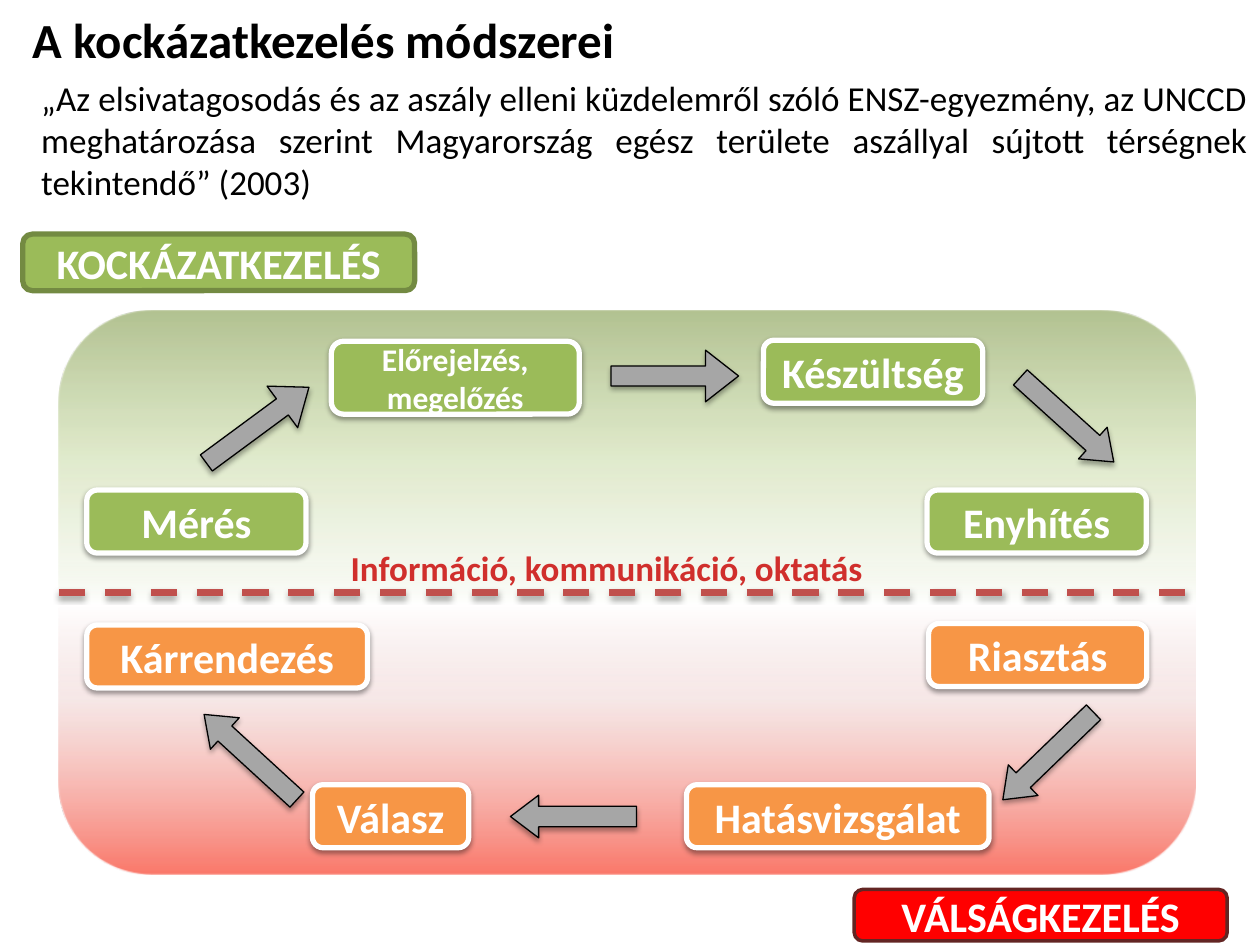
from lxml.etree import SubElement
from pptx import Presentation
from pptx.dml.color import RGBColor
from pptx.enum.dml import MSO_LINE
from pptx.enum.shapes import MSO_CONNECTOR, MSO_SHAPE
from pptx.enum.text import MSO_ANCHOR, MSO_AUTO_SIZE, PP_ALIGN
from pptx.oxml.ns import qn
from pptx.util import Cm, Pt

GREEN, ORANGE, RED = "9BBB59", "F79646", "FF0000"
WHITE, BLACK, GREY = "FFFFFF", "000000", "A6A6A6"

# Gradient stops: position %, colour, opacity %
PANEL_STOPS = [(0, "77933C", 56), (26, "C3D69B", 50), (44, "EBF1DE", 54),
               (52, WHITE, 100), (69, "F2DCDB", 66), (100, "FA786A", 100)]
INFO_STOPS = [(0, "FC7C7A", 100), (75, "D02F2C", 100), (100, "C70500", 100)]

BOX_HEIGHT = 1.27
# Steps of the cycle: text, left, top, width, height, fill, text size
STEPS = [
    ("Enyhítés", 18.69, 9.88, 4.42, BOX_HEIGHT, GREEN, 24),
    ("Mérés", 1.75, 9.88, 4.42, BOX_HEIGHT, GREEN, 24),
    ("Készültség", 15.39, 6.86, 4.42, BOX_HEIGHT, GREEN, 24),
    ("Előrejelzés, megelőzés", 6.68, 6.88, 5, 1.47, GREEN, 18),
    ("Hatásvizsgálat", 13.84, 15.82, 6.1, BOX_HEIGHT, ORANGE, 24),
    ("Riasztás", 18.72, 12.57, 4.4, BOX_HEIGHT, ORANGE, 24),
    ("Válasz", 6.3, 15.82, 3.15, BOX_HEIGHT, ORANGE, 24),
    ("Kárrendezés", 1.75, 12.6, 5.66, BOX_HEIGHT, ORANGE, 24),
]
WIDE = (2.57, 1.04, 0.39, 0.64)
SLIM = (2.54, 0.86, 0.48, 0.66)
# Arrows of the cycle: left, top, rotation, (width, height, adjustments)
ARROWS = [
    (3.91, 8.05, 323.6, WIDE),
    (12.32, 7.06, 0, WIDE),
    (20.24, 8.03, 42.1, SLIM),
    (19.86, 14.81, 136, SLIM),
    (10.29, 16.03, 180, SLIM),
    (3.78, 14.83, 222.5, SLIM),
]


def rgb(value):
    return RGBColor.from_string(value)


def set_format(target, values):
    for name, value in values.items():
        setattr(target, name, value)


def set_fill(fill, color):
    fill.solid()
    fill.fore_color.rgb = rgb(color)


def add_color(parent, color, opacity):
    node = SubElement(parent, qn("a:srgbClr"), val=color)
    if opacity < 100:
        SubElement(node, qn("a:alpha"), val=str(opacity * 1000))


def set_gradient(fill, owner, stops):
    """Fill from top to bottom; owner is the XML element holding the fill."""
    fill.gradient()
    fill.gradient_angle = 270
    stop_list = owner.find(qn("a:gradFill")).find(qn("a:gsLst"))
    for old in list(stop_list):
        stop_list.remove(old)
    for position, color, opacity in stops:
        stop = SubElement(stop_list, qn("a:gs"), pos=str(position * 1000))
        add_color(stop, color, opacity)


def add_shadow(properties, opacity, distance):
    """Cast a soft shadow downwards from the owner of the spPr element."""
    effects = properties.find(qn("a:effectLst"))
    if effects is None:
        effects = SubElement(properties, qn("a:effectLst"))
    shadow = SubElement(effects, qn("a:outerShdw"), blurRad=str(Pt(3.1)),
                        dist=str(Pt(distance)), dir="5400000", rotWithShape="0")
    add_color(shadow, BLACK, opacity)


def write(frame, text, size, color=BLACK, bold=True, align=PP_ALIGN.CENTER):
    paragraph = frame.paragraphs[0]
    paragraph.alignment = align
    run = paragraph.add_run()
    run.text = text
    set_format(run.font, {"name": "Calibri", "size": Pt(size), "bold": bold})
    run.font.color.rgb = rgb(color)
    return run


def add_filled(slide, kind, place, color, line=None, line_width=0):
    shape = slide.shapes.add_shape(kind, *map(Cm, place))
    shape.shadow.inherit = False
    set_fill(shape.fill, color)
    if line:
        shape.line.color.rgb = rgb(line)
        shape.line.width = Pt(line_width)
    else:
        shape.line.fill.background()
    return shape


def add_label(slide, text, place, color, line, line_width, size=24):
    label = add_filled(slide, MSO_SHAPE.ROUNDED_RECTANGLE, place, color, line, line_width)
    label.text_frame.vertical_anchor = MSO_ANCHOR.MIDDLE
    write(label.text_frame, text, size, WHITE)
    return label


def add_arrow(slide, left, top, rotation, form):
    width, height, shaft, head = form
    arrow = add_filled(slide, MSO_SHAPE.RIGHT_ARROW, (left, top, width, height),
                       GREY, BLACK, 0.75)
    arrow.rotation = rotation
    arrow.adjustments[0], arrow.adjustments[1] = shaft, head
    add_shadow(arrow._element.spPr, 35, 1.8)


def add_divider(slide, left, right, y):
    divider = slide.shapes.add_connector(MSO_CONNECTOR.STRAIGHT,
                                         Cm(left), Cm(y), Cm(right), Cm(y))
    divider.line.color.rgb = rgb("C0504D")
    set_format(divider.line, {"width": Pt(3.75), "dash_style": MSO_LINE.DASH})
    add_shadow(divider._element.spPr, 35, 1.8)


def add_text(slide, place, text, **style):
    frame = slide.shapes.add_textbox(*map(Cm, place)).text_frame
    set_format(frame, {"word_wrap": True, "auto_size": MSO_AUTO_SIZE.SHAPE_TO_FIT_TEXT})
    return write(frame, text, 20, **style)


def add_title(slide, text):
    title = slide.shapes.title
    set_format(title, {"left": Cm(0.41), "top": Cm(0.08),
                       "width": Cm(17.5), "height": Cm(1.4)})
    set_fill(title.fill, WHITE)
    set_format(title.text_frame, {"vertical_anchor": MSO_ANCHOR.MIDDLE,
                                  "auto_size": MSO_AUTO_SIZE.NONE})
    write(title.text_frame, text, 28, align=PP_ALIGN.LEFT)


def main():
    deck = Presentation()
    set_format(deck, {"slide_width": Cm(25.4), "slide_height": Cm(19.05)})
    slide = deck.slides.add_slide(deck.slide_layouts[5])

    add_title(slide, "A kockázatkezelés módszerei")
    panel = add_filled(slide, MSO_SHAPE.ROUNDED_RECTANGLE,
                       (1.19, 6.27, 22.91, 11.35), WHITE)
    set_gradient(panel.fill, panel._element.spPr, PANEL_STOPS)
    add_label(slide, "KOCKÁZATKEZELÉS", (0.46, 4.72, 7.9, 1.14), GREEN, "738A42", 3)
    add_label(slide, "VÁLSÁGKEZELÉS", (17.22, 17.93, 7.52, 1.04), RED, "632523", 2)
    add_divider(slide, 1.19, 24.1, 11.94)

    for text, left, top, width, height, color, size in STEPS:
        step = add_label(slide, text, (left, top, width, height), color, WHITE, 3, size)
        add_shadow(step._element.spPr, 38, 1.6)
    for arrow in ARROWS:
        add_arrow(slide, *arrow)

    info = add_text(slide, (6.73, 10.9, 11, 1.12), "Információ, kommunikáció, oktatás")
    set_gradient(info.font.fill, info._r.get_or_add_rPr(), INFO_STOPS)
    add_text(slide, (0.58, 1.42, 24.82, 2.82),
             "„Az elsivatagosodás és az aszály elleni küzdelemről szóló "
             "ENSZ-egyezmény, az UNCCD meghatározása szerint Magyarország egész "
             "területe aszállyal sújtott térségnek tekintendő” (2003)",
             bold=False, align=PP_ALIGN.JUSTIFY)
    deck.save("out.pptx")


if __name__ == "__main__":
    main()
